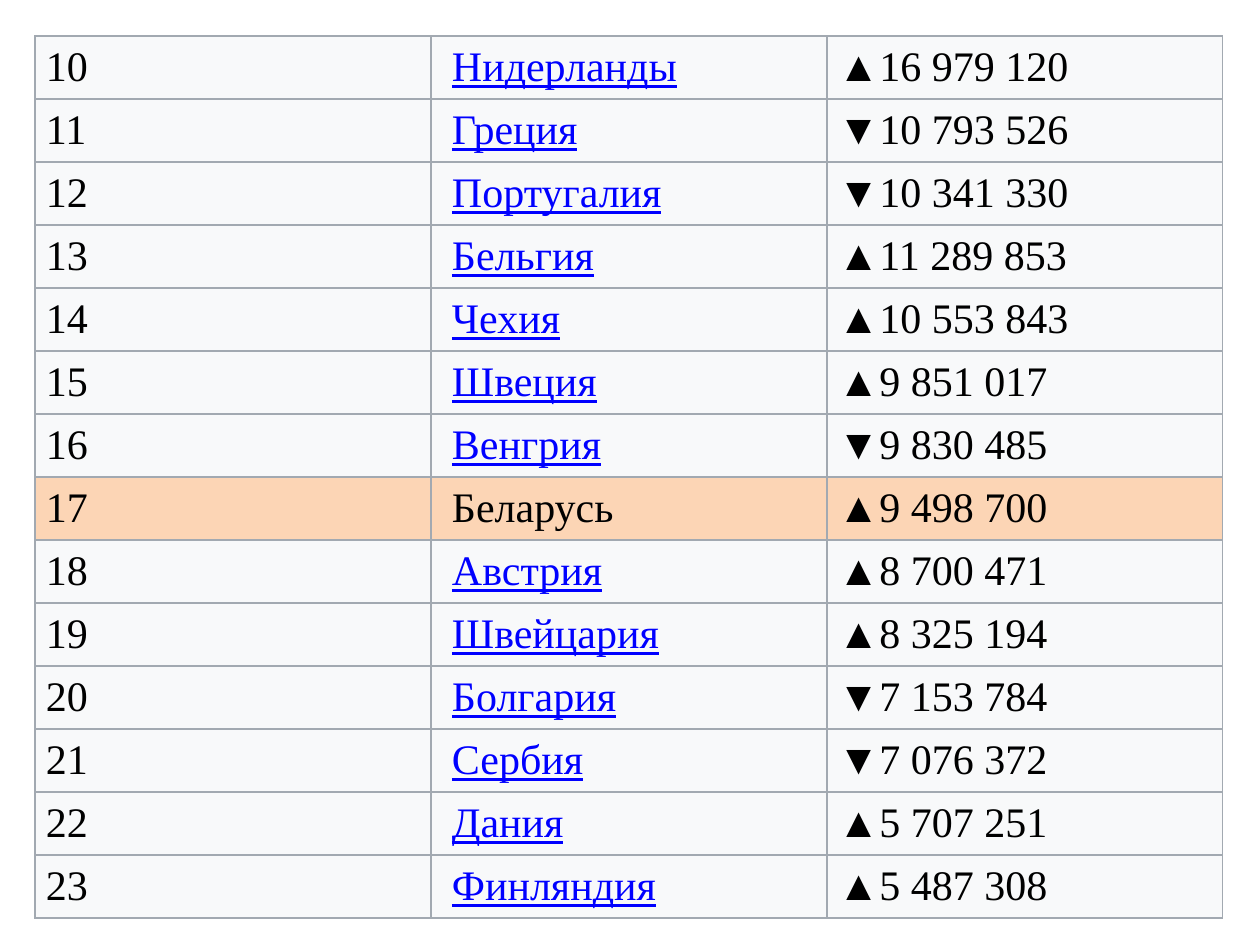
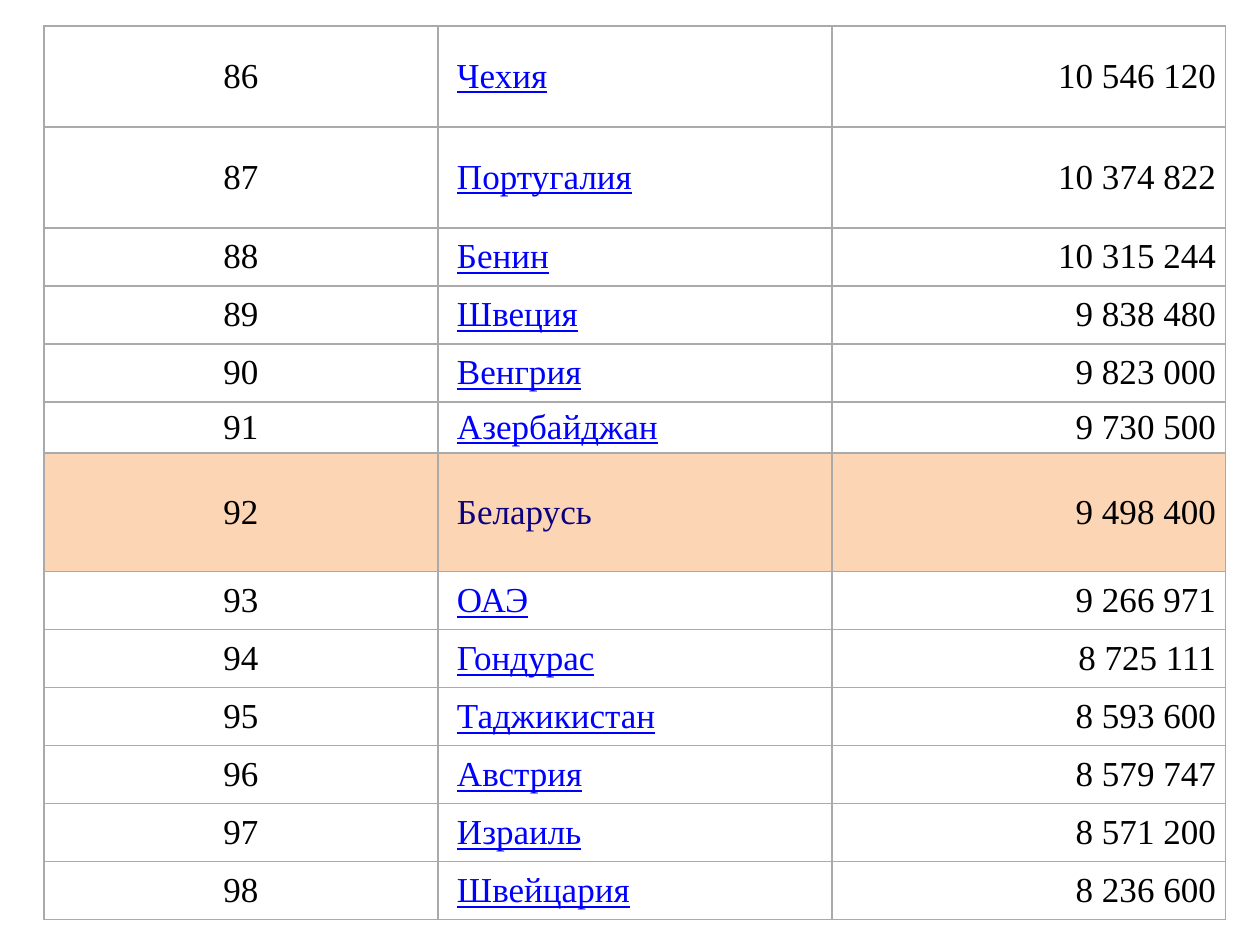
from lxml import etree
from pptx import Presentation
from pptx import util as u
from pptx.dml.color import RGBColor
from pptx.enum import text
from pptx.oxml import ns

BLACK = RGBColor(0x00, 0x00, 0x00)
WHITE = RGBColor(0xFF, 0xFF, 0xFF)
LINK_BLUE = RGBColor(0x00, 0x00, 0xFF)
NAVY = RGBColor(0x0B, 0x00, 0x80)
PALE_GREY = RGBColor(0xF8, 0xF9, 0xFA)
PEACH = RGBColor(0xFC, 0xD5, 0xB5)
SLATE_BORDER = RGBColor(0xA2, 0xA9, 0xB1)
GREY_BORDER = RGBColor(0xAA, 0xAA, 0xAA)

LEFT, CENTER, RIGHT = (text.PP_ALIGN.LEFT, text.PP_ALIGN.CENTER, text.PP_ALIGN.RIGHT)
HOME_COUNTRY = "Беларусь"

EUROPE = [
    ("10", "Нидерланды", "▲16 979 120"),
    ("11", "Греция", "▼10 793 526"),
    ("12", "Португалия", "▼10 341 330"),
    ("13", "Бельгия", "▲11 289 853"),
    ("14", "Чехия", "▲10 553 843"),
    ("15", "Швеция", "▲9 851 017"),
    ("16", "Венгрия", "▼9 830 485"),
    ("17", "Беларусь", "▲9 498 700"),
    ("18", "Австрия", "▲8 700 471"),
    ("19", "Швейцария", "▲8 325 194"),
    ("20", "Болгария", "▼7 153 784"),
    ("21", "Сербия", "▼7 076 372"),
    ("22", "Дания", "▲5 707 251"),
    ("23", "Финляндия", "▲5 487 308"),
]

WORLD = [
    ("86", "Чехия", "10 546 120"),
    ("87", "Португалия", "10 374 822"),
    ("88", "Бенин", "10 315 244"),
    ("89", "Швеция", "9 838 480"),
    ("90", "Венгрия", "9 823 000"),
    ("91", "Азербайджан", "9 730 500"),
    ("92", "Беларусь", "9 498 400"),
    ("93", "ОАЭ", "9 266 971"),
    ("94", "Гондурас", "8 725 111"),
    ("95", "Таджикистан", "8 593 600"),
    ("96", "Австрия", "8 579 747"),
    ("97", "Израиль", "8 571 200"),
    ("98", "Швейцария", "8 236 600"),
]


def px(length):
    return u.Emu(round(length * u.Inches(1) / 126))


class RankingDeck:
    font_name = "Times New Roman"
    border_width = u.Pt(0.75)
    vertical_inset = 5

    def __init__(self):
        self.presentation = Presentation()
        self.presentation.slide_width = px(1260)
        self.presentation.slide_height = px(945)
        self.slide = None

    def add_slide(self):
        self.slide = self.presentation.slides.add_slide(self.presentation.slide_layouts[6])

    def add_ranking(self, rows, left, top, column_width, row_heights, size, inset,
                    indent, border, fill, home_color, alignments):
        shape = self.slide.shapes.add_table(len(rows), 3, px(left), px(top),
                                            px(3 * column_width), px(sum(row_heights)))
        table = shape.table
        table.first_row = table.horz_banding = False
        for column in table.columns:
            column.width = px(column_width)
        for row_index, values in enumerate(rows):
            table.rows[row_index].height = px(row_heights[row_index])
            is_home = values[1] == HOME_COUNTRY
            for column_index, value in enumerate(values):
                cell = table.cell(row_index, column_index)
                is_country = column_index == 1
                self.set_borders(cell, border)
                cell.fill.solid()
                cell.fill.fore_color.rgb = PEACH if is_home else fill
                cell.margin_left = px(inset + (indent if is_country else 0))
                cell.margin_right = px(inset)
                cell.margin_top = cell.margin_bottom = px(self.vertical_inset)
                cell.vertical_anchor = text.MSO_ANCHOR.MIDDLE
                country_color = home_color if is_home else LINK_BLUE
                self.set_text(cell, value, size, alignments[column_index],
                              country_color if is_country else BLACK,
                              is_country and not is_home)

    def set_text(self, cell, value, size, alignment, color, underline):
        cell.text = value
        paragraph = cell.text_frame.paragraphs[0]
        paragraph.alignment = alignment
        font = paragraph.font
        font.name = self.font_name
        font.size = u.Pt(size)
        font.color.rgb = color
        font.underline = underline

    def set_borders(self, cell, color):
        properties = cell._tc.get_or_add_tcPr()
        for side in ("a:lnL", "a:lnR", "a:lnT", "a:lnB"):
            line = etree.SubElement(properties, ns.qn(side), w=str(self.border_width))
            solid = etree.SubElement(line, ns.qn("a:solidFill"))
            etree.SubElement(solid, ns.qn("a:srgbClr"), val=str(color))


def main():
    deck = RankingDeck()

    deck.add_slide()
    deck.add_ranking(EUROPE, left=35, top=36, column_width=396,
                     row_heights=[63] * len(EUROPE), size=24, inset=11, indent=10,
                     border=SLATE_BORDER, fill=PALE_GREY, home_color=BLACK,
                     alignments=(LEFT, LEFT, LEFT))

    deck.add_slide()
    deck.add_ranking(WORLD, left=44, top=26, column_width=394,
                     row_heights=[101] * 2 + [58] * 3 + [51, 119] + [58] * 6,
                     size=20, inset=10, indent=9,
                     border=GREY_BORDER, fill=WHITE, home_color=NAVY,
                     alignments=(CENTER, LEFT, RIGHT))

    deck.presentation.save("out.pptx")


if __name__ == "__main__":
    main()
